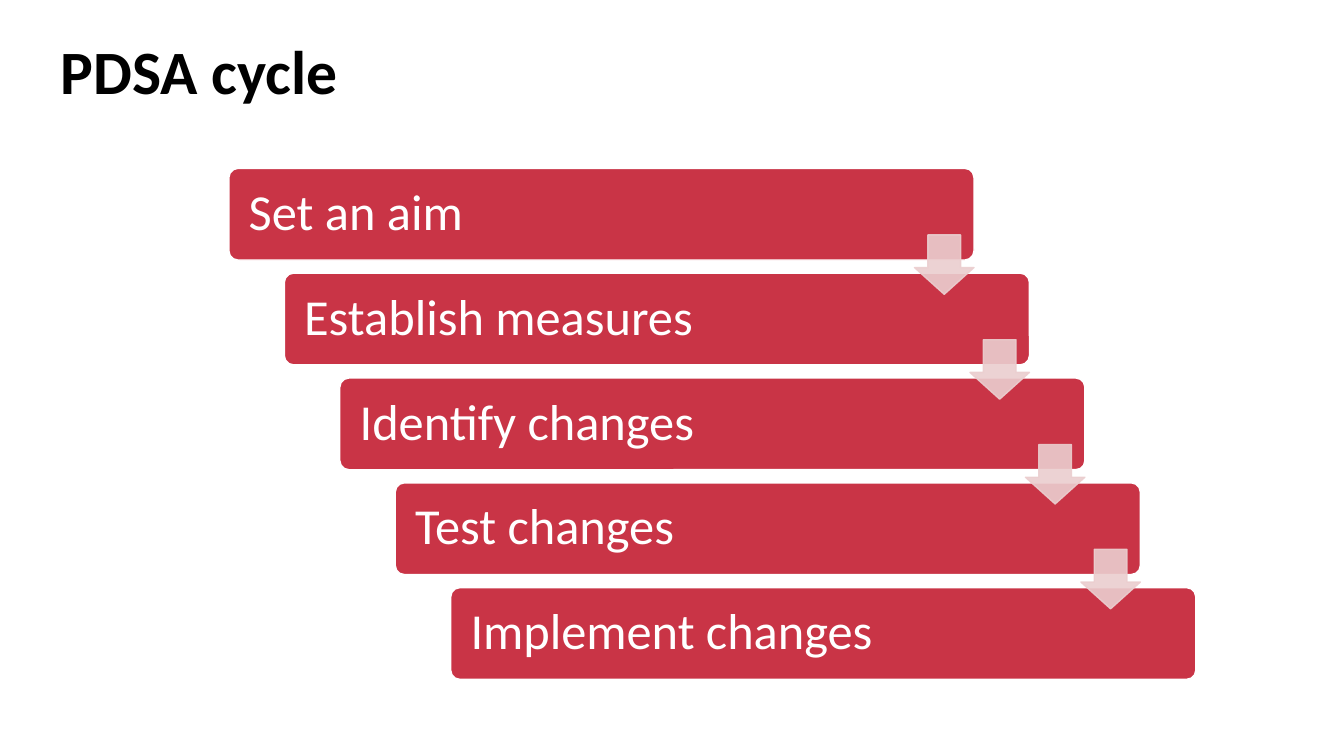
from dataclasses import dataclass

from pptx import Presentation
from pptx.dml.color import RGBColor
from pptx.enum.shapes import MSO_SHAPE
from pptx.enum.text import MSO_ANCHOR, MSO_AUTO_SIZE, PP_ALIGN
from pptx.oxml.ns import qn
from pptx.util import Inches, Pt
from lxml.etree import SubElement


@dataclass(frozen=True)
class Theme:
    """Colours, font and type sizes of the slide."""
    font: str = "Calibri"
    title_size: int = 44
    step_size: int = 36
    title_color: RGBColor = RGBColor(0x00, 0x00, 0x00)
    white: RGBColor = RGBColor(0xFF, 0xFF, 0xFF)
    bar: RGBColor = RGBColor(0xC9, 0x34, 0x46)
    arrow: RGBColor = RGBColor(0xEB, 0xCE, 0xCF)
    arrow_opacity: int = 90


@dataclass(frozen=True)
class Box:
    """A rectangle in inches."""
    left: float
    top: float
    width: float
    height: float

    def lengths(self):
        """Return left, top, width and height as slide lengths."""
        return [Inches(n) for n in (self.left, self.top, self.width, self.height)]


THEME = Theme()
STEPS = ["Set an aim", "Establish measures", "Identify changes",
         "Test changes", "Implement changes"]


def write_line(frame, text, size, color, insets, bold=False):
    """Write one left-aligned line, centred vertically in its frame."""
    frame.word_wrap = True
    frame.auto_size = MSO_AUTO_SIZE.NONE
    frame.vertical_anchor = MSO_ANCHOR.MIDDLE
    side, edge = insets
    frame.margin_left = frame.margin_right = Inches(side)
    frame.margin_top = frame.margin_bottom = Inches(edge)
    para = frame.paragraphs[0]
    para.alignment = PP_ALIGN.LEFT
    para.line_spacing = 0.9
    para.space_before = Pt(0)
    span = para.add_run()
    span.text = text
    span.font.name = THEME.font
    span.font.size = Pt(size)
    span.font.bold = bold
    span.font.color.rgb = color


def add_block(page, kind, box, adjustments, fill, line):
    """Add a filled and outlined preset shape without a shadow."""
    block = page.shapes.add_shape(kind, *box.lengths())
    for index, value in enumerate(adjustments):
        block.adjustments[index] = value
    block.shadow.inherit = False
    block.fill.solid()
    block.fill.fore_color.rgb = fill
    block.line.color.rgb = line
    block.line.width = Pt(1)
    return block


def add_title(page, box):
    """Place the slide title in the given box."""
    title = page.shapes.title
    title.left, title.top, title.width, title.height = box.lengths()
    write_line(title.text_frame, "PDSA cycle", THEME.title_size,
               THEME.title_color, (0, 0.05), bold=True)


def add_arrow(page, box):
    """Add a translucent arrow pointing to the next step."""
    arrow = add_block(page, MSO_SHAPE.DOWN_ARROW, box, (0.55, 0.45),
                      THEME.arrow, THEME.arrow)
    for color in arrow.element.spPr.iter(qn("a:srgbClr")):
        SubElement(color, qn("a:alpha"), val=str(THEME.arrow_opacity * 1000))


def add_staircase(page, box):
    """Fill the box with descending step bars, linked by arrows."""
    bar_width, bar_height, arrow_size = 7.39, 0.91, 0.59
    gaps = len(STEPS) - 1
    shift = (box.width - bar_width) / gaps
    drop = (box.height - bar_height) / gaps
    bars = [Box(box.left + i * shift, box.top + i * drop, bar_width, bar_height)
            for i in range(len(STEPS))]
    for text, place in zip(STEPS, bars):
        bar = add_block(page, MSO_SHAPE.ROUNDED_RECTANGLE, place, (0.1,),
                        THEME.bar, THEME.white)
        write_line(bar.text_frame, text, THEME.step_size, THEME.white, (0.17, 0.15))
    for place in bars[:-1]:
        add_arrow(page, Box(place.left + bar_width - arrow_size, place.top + 0.66,
                            arrow_size, arrow_size))


def main():
    """Build and save the slide."""
    deck = Presentation()
    deck.slide_width, deck.slide_height = Inches(13.33), Inches(7.5)
    page = deck.slides.add_slide(deck.slide_layouts.get_by_name("Title Only"))
    add_title(page, Box(0.6, 0.24, 7.74, 1))
    add_staircase(page, Box(2.27, 1.67, 9.59, 5.07))
    deck.save("out.pptx")


if __name__ == "__main__":
    main()
